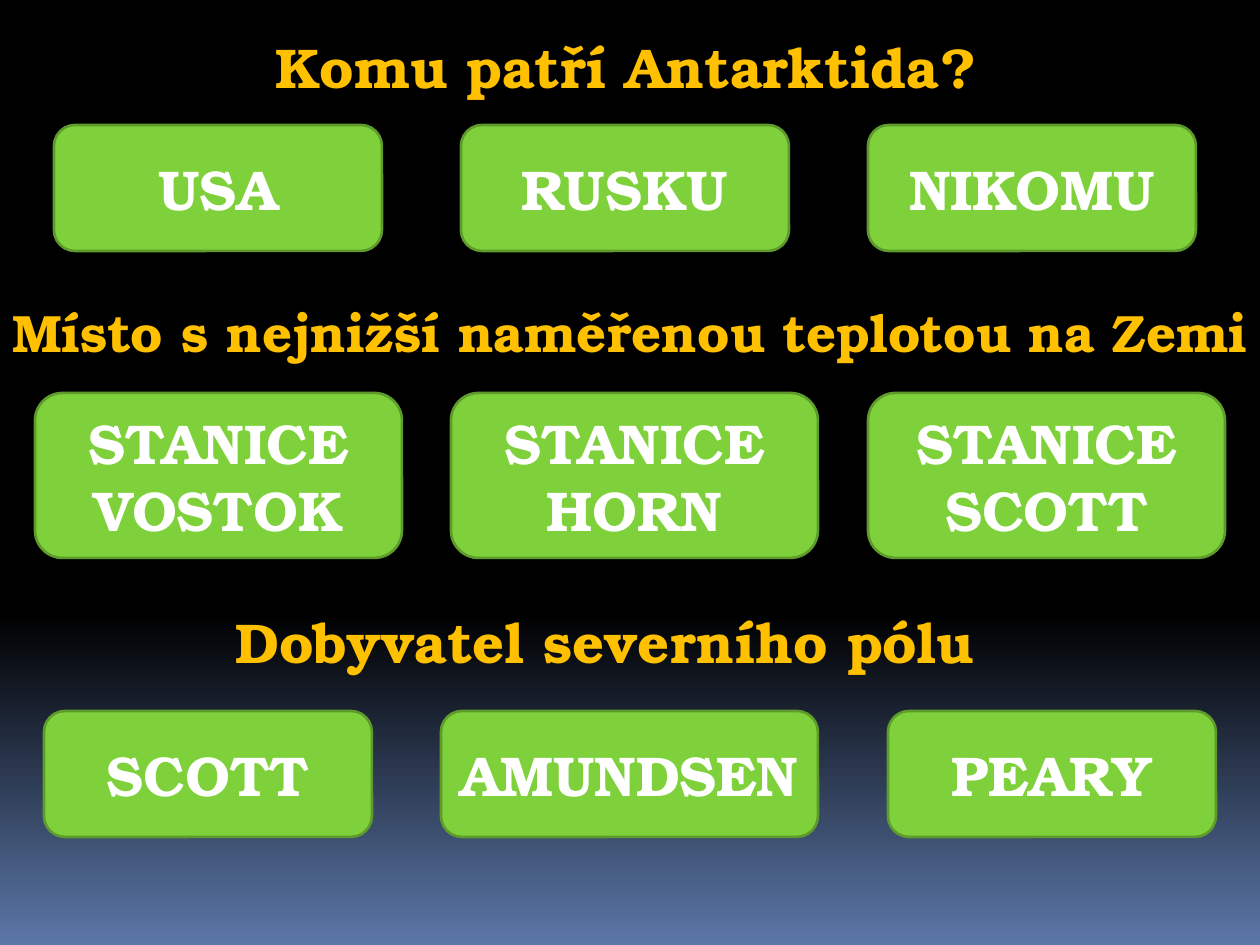
from copy import deepcopy

from pptx import Presentation
from pptx.dml.color import RGBColor
from pptx.enum.shapes import MSO_SHAPE
from pptx.enum.text import MSO_ANCHOR, MSO_AUTO_SIZE, PP_ALIGN
from pptx.util import Emu, Pt

ROUNDED = MSO_SHAPE.ROUNDED_RECTANGLE
TOP, MIDDLE = MSO_ANCHOR.TOP, MSO_ANCHOR.MIDDLE
LEFT, CENTER = PP_ALIGN.LEFT, PP_ALIGN.CENTER
NO_FIT, GROW = MSO_AUTO_SIZE.NONE, MSO_AUTO_SIZE.SHAPE_TO_FIT_TEXT

THEME = {
    "font": "TeX Gyre Bonum",
    "question": RGBColor.from_string("FFC000"),
    "answer": RGBColor.from_string("FFFFFF"),
    "fill": RGBColor.from_string("7FD13B"),
    "line": RGBColor.from_string("5E9B2C"),
    "background": [(0, "000000"), (0.65, "000000"), (1, "5B77A8")],
    "size": 32,
    "long_size": 30,
    "line_width": 1.5,
}


def px(*lengths):
    return [Emu(round(n * 914400 / 126)) for n in lengths]


def write(s, text, size, color, align, anchor, wrap, fit):
    tf = s.text_frame
    tf.word_wrap, tf.auto_size, tf.vertical_anchor = wrap, fit, anchor
    p = tf.paragraphs[0]
    p.alignment = align
    r = p.add_run()
    r.text = text
    r.font.name, r.font.size, r.font.bold = THEME["font"], Pt(size), True
    r.font.color.rgb = color


prs = Presentation()
prs.slide_width, prs.slide_height = px(1260, 945)
slide = prs.slides.add_slide(prs.slide_layouts[5])  # title only

# Background: black fading to blue at the bottom
fill = slide.background.fill
fill.gradient()
fill.gradient_angle = 270
gs_list = fill._fill._gradFill.gsLst
gs_list.insert(1, deepcopy(gs_list[0]))
for stop, (position, color) in zip(fill.gradient_stops, THEME["background"]):
    stop.position = position
    stop.color.rgb = RGBColor.from_string(color)

# Each quiz: question, its box, its size, answer top and height, answers (left, width, text)
quizzes = [
    ("Komu patří Antarktida?", (263, 26, 735, 81), THEME["size"], 125, 126,
     [(54, 328, "USA"), (461, 328, "RUSKU"), (868, 328, "NIKOMU")]),
    ("Místo s nejnižší naměřenou teplotou na Zemi", (0, 294, 1276, 77), THEME["long_size"], 393, 165,
     [(35, 367, "STANICE VOSTOK"), (451, 367, "STANICE HORN"), (868, 357, "STANICE SCOTT")]),
    ("Dobyvatel severního pólu", (223, 601, 772, 81), THEME["size"], 711, 126,
     [(44, 328, "SCOTT"), (441, 377, "AMUNDSEN"), (888, 328, "PEARY")]),
]

for i, (question, box, size, top, height, answers) in enumerate(quizzes):
    # Question: the first one is the slide title
    if i == 0:
        s = slide.shapes.title
        s.left, s.top, s.width, s.height = px(*box)
    else:
        s = slide.shapes.add_textbox(*px(*box))
    write(s, question, size, THEME["question"], LEFT, TOP, False, GROW)

    # Answer buttons
    for left, width, answer in answers:
        s = slide.shapes.add_shape(ROUNDED, *px(left, top, width, height))
        s.shadow.inherit = False
        s.fill.solid()
        s.fill.fore_color.rgb = THEME["fill"]
        s.line.color.rgb = THEME["line"]
        s.line.width = Pt(THEME["line_width"])
        write(s, answer, THEME["size"], THEME["answer"], CENTER, MIDDLE, True, NO_FIT)

prs.save("out.pptx")
